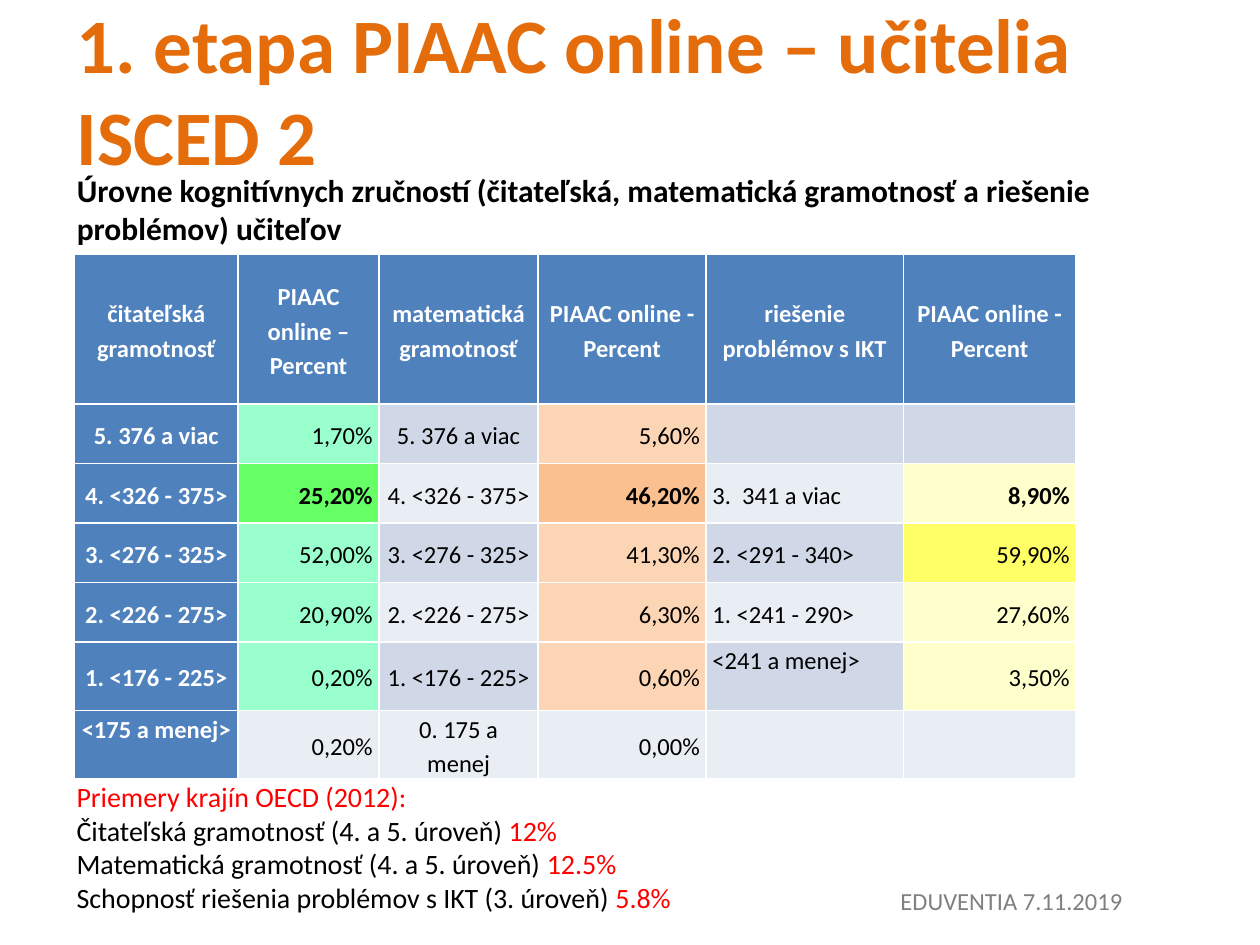
from pptx import Presentation
from pptx.dml.color import RGBColor
from pptx.enum import text as t
from pptx.util import Pt

ORANGE, BLACK, WHITE, RED, GREY = "E46C0A", "000000", "FFFFFF", "FF0000", "808080"
BLUE, BANDS = "4F81BD", ("D0D8E8", "E9EDF4")
GREEN, PEACH, YELLOW = "99FFCC", "FCD5B5", "FFFFCC"
LEFT, CENTER, RIGHT = t.PP_ALIGN.LEFT, t.PP_ALIGN.CENTER, t.PP_ALIGN.RIGHT
TOP, MIDDLE = t.MSO_ANCHOR.TOP, t.MSO_ANCHOR.MIDDLE


def rgb(value):
    return RGBColor.from_string(value)


def add_run(p, words, size, color, bold=False):
    r = p.add_run()
    r.text = words
    for key, value in {"name": "Calibri", "size": Pt(size), "bold": bold}.items():
        setattr(r.font, key, value)
    r.font.color.rgb = rgb(color)


prs = Presentation()
prs.slide_width, prs.slide_height = Pt(720), Pt(540)
s = prs.slides.add_slide(prs.slide_layouts[1])

# Title and subtitle in the template's placeholders
heads = [
    (s.shapes.title, (36.7, 26, 648, 49.7), MIDDLE,
     "1. etapa PIAAC online – učitelia ISCED 2", 44, ORANGE),
    (s.placeholders[1], (36.7, 94.3, 648, 408), TOP,
     "Úrovne kognitívnych zručností (čitateľská, matematická gramotnosť "
     "a\u00a0riešenie problémov) učiteľov", 18, BLACK),
]
for sp, box, anchor, words, size, color in heads:
    for key, value in zip(("left", "top", "width", "height"), box):
        setattr(sp, key, Pt(value))
    tf = sp.text_frame
    for key, value in {"auto_size": t.MSO_AUTO_SIZE.NONE, "word_wrap": True,
                       "vertical_anchor": anchor}.items():
        setattr(tf, key, value)
    p = tf.paragraphs[0]
    p.alignment, p.space_before = LEFT, Pt(0)
    add_run(p, words, size, color, True)

# Subtitle without bullet or hanging indent
pPr = p._p.get_or_add_pPr()
pPr.set("marL", "0")
pPr.set("indent", "0")
pPr.append(pPr.makeelement(
    "{http://schemas.openxmlformats.org/drawingml/2006/main}buNone", {}))

# Table of skill levels
rows = [
    ["čitateľská gramotnosť", "PIAAC online – Percent", "matematická gramotnosť",
     "PIAAC online - Percent", "riešenie problémov s IKT", "PIAAC online - Percent"],
    ["5. 376 a viac", "1,70%", "5. 376 a viac", "5,60%", "", ""],
    ["4. <326 - 375>", "25,20%", "4. <326 - 375>", "46,20%", "3.  341 a viac", "8,90%"],
    ["3. <276 - 325>", "52,00%", "3. <276 - 325>", "41,30%", "2. <291 - 340>", "59,90%"],
    ["2. <226 - 275>", "20,90%", "2. <226 - 275>", "6,30%", "1. <241 - 290>", "27,60%"],
    ["1. <176 - 225>", "0,20%", "1. <176 - 225>", "0,60%", "<241 a menej>", "3,50%"],
    ["<175 a menej>", "0,20%", "0. 175 a menej", "0,00%", "", ""],
]
widths = [93.5, 80.5, 91, 96, 112.7, 98.7]
heights = [85.5, 34, 34, 34, 34, 39, 39]
aligns = [CENTER, RIGHT, CENTER, RIGHT, LEFT, RIGHT]
column_fills = {1: GREEN, 3: PEACH, 5: YELLOW}
highlights = {(2, 1): "66FF66", (2, 3): "FAC090", (3, 5): "FFFF66"}
bold_cells = {(2, 1), (2, 3), (2, 5)}
top_cells = {(5, 4), (6, 0)}

table = s.shapes.add_table(len(rows), len(widths), Pt(42.6), Pt(145.5),
                           Pt(sum(widths)), Pt(sum(heights))).table
table.first_col = True
for col, width in zip(table.columns, widths):
    col.width = Pt(width)
for i, (row, height) in enumerate(zip(rows, heights)):
    table.rows[i].height = Pt(height)
    for j, words in enumerate(row):
        cell = table.cell(i, j)
        heading = i == 0 or j == 0
        fill = BANDS[(i - 1) % 2]
        if heading:
            fill = BLUE
        elif words and i < len(rows) - 1:
            fill = highlights.get((i, j), column_fills.get(j, fill))
        cell.fill.solid()
        cell.fill.fore_color.rgb = rgb(fill)
        anchor = TOP if (i, j) in top_cells else MIDDLE
        for key, value in {"margin_left": Pt(3.6), "margin_right": Pt(3.6),
                           "margin_top": 0, "margin_bottom": 0,
                           "vertical_anchor": anchor}.items():
            setattr(cell, key, value)
        if words:
            p = cell.text_frame.paragraphs[0]
            p.alignment = CENTER if heading else aligns[j]
            p.line_spacing = 1.15
            add_run(p, words, 14, WHITE if heading else BLACK,
                    heading or (i, j) in bold_cells)

# OECD averages and footer
notes = [
    ((36.7, 442, 471, 85), 16, [
        [("Priemery krajín OECD (2012):", RED)],
        [("Čitateľská gramotnosť (4. a 5. úroveň) ", BLACK), ("12%", RED)],
        [("Matematická gramotnosť (4. a 5. úroveň) ", BLACK), ("12.5%", RED)],
        [("Schopnosť riešenia problémov s IKT (3. úroveň) ", BLACK), ("5.8%", RED)],
    ]),
    ((507.5, 502.5, 208, 24.5), 14, [[("EDUVENTIA 7.11.2019", GREY)]]),
]
for box, size, lines in notes:
    tf = s.shapes.add_textbox(*map(Pt, box)).text_frame
    tf.word_wrap = True
    for n, line in enumerate(lines):
        p = tf.add_paragraph() if n else tf.paragraphs[0]
        for words, color in line:
            add_run(p, words, size, color)

prs.save("out.pptx")
